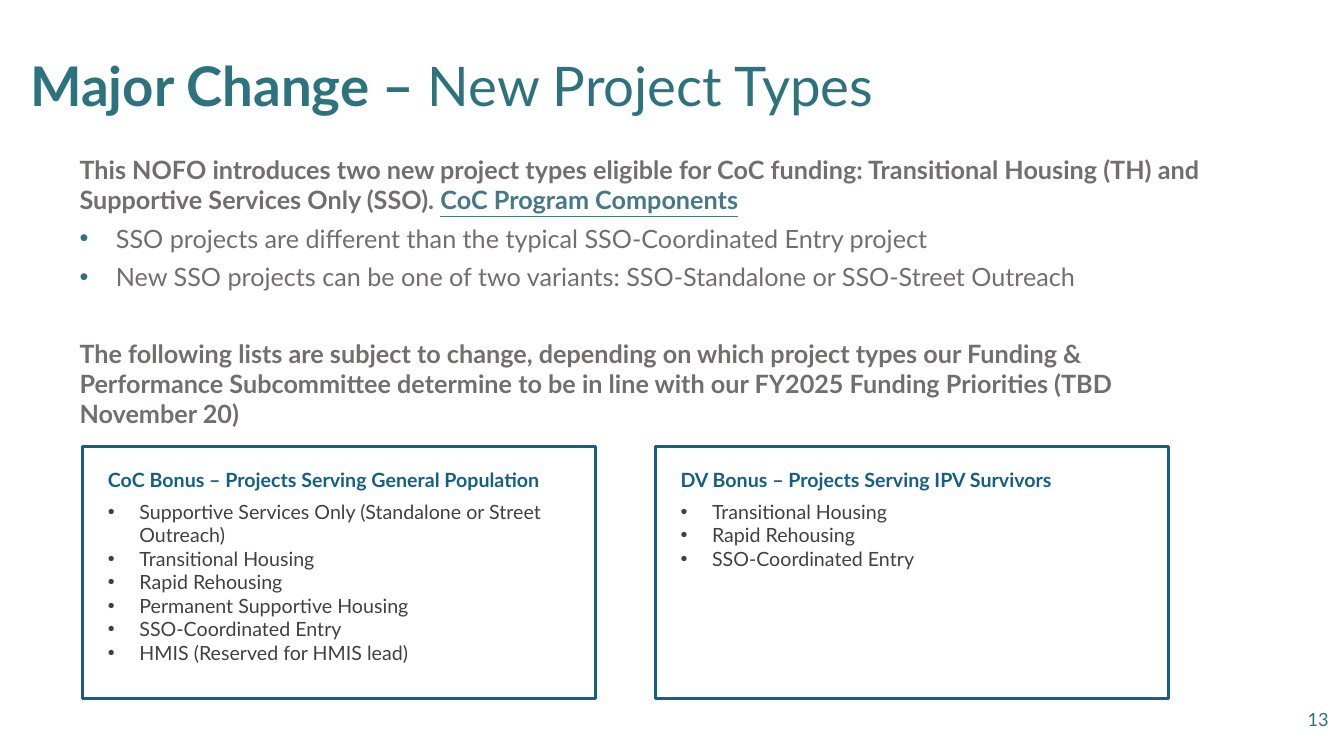
from lxml import etree
from pptx import Presentation
from pptx.dml.color import RGBColor
from pptx.enum.shapes import MSO_SHAPE
from pptx.enum.text import MSO_ANCHOR, MSO_AUTO_SIZE, PP_ALIGN
from pptx.oxml.ns import qn
from pptx.util import Pt

RECT = MSO_SHAPE.RECTANGLE
TOP, BOTTOM = MSO_ANCHOR.TOP, MSO_ANCHOR.BOTTOM
FIXED = MSO_AUTO_SIZE.NONE
LEFT, RIGHT = PP_ALIGN.LEFT, PP_ALIGN.RIGHT

TEAL, GRAY, LINK = "2D737E", "726E6E", "467886"
NAVY, DARK = "156082", "404040"

INTRO = [
    ("This NOFO introduces two new project types eligible for CoC funding: "
     "Transitional Housing (TH) and Supportive Services Only (SSO). "),
    "CoC Program Components",
]
POINTS = [
    "SSO projects are different than the typical SSO-Coordinated Entry project",
    "New SSO projects can be one of two variants: SSO-Standalone or SSO-Street Outreach",
]
NOTICE = (
    "The following lists are subject to change, depending on which project types "
    "our Funding & Performance Subcommittee determine to be in line with our "
    "FY2025 Funding Priorities (TBD November 20)"
)
CARDS = [
    ("CoC Bonus – Projects Serving General Population", [
        "Supportive Services Only (Standalone or Street Outreach)",
        "Transitional Housing",
        "Rapid Rehousing",
        "Permanent Supportive Housing",
        "SSO-Coordinated Entry",
        "HMIS (Reserved for HMIS lead)",
    ]),
    ("DV Bonus – Projects Serving IPV Survivors", [
        "Transitional Housing",
        "Rapid Rehousing",
        "SSO-Coordinated Entry",
    ]),
]


def color(code):
    return RGBColor.from_string(code)


class Page:
    face = "Lato"

    def __init__(self, deck):
        self.slide = deck.slides.add_slide(deck.slide_layouts[1])

    def frame(self, shape, box, pad, anchor=TOP):
        shape.left, shape.top, shape.width, shape.height = map(Pt, box)
        frame = shape.text_frame
        frame.word_wrap = True
        frame.auto_size = FIXED
        frame.vertical_anchor = anchor
        (frame.margin_left, frame.margin_top,
         frame.margin_right, frame.margin_bottom) = map(Pt, pad)
        return frame

    def holder(self, index, box, pad, anchor=TOP):
        return self.frame(self.slide.placeholders[index], box, pad, anchor)

    def text(self, box, pad):
        shape = self.slide.shapes.add_textbox(*map(Pt, box))
        return self.frame(shape, box, pad)

    def para(self, frame, parts, size, tint, bold=False, gap=0,
             left=0, hang=0, dot=None, align=LEFT):
        para = frame.paragraphs[0]
        if para.runs:
            para = frame.add_paragraph()
        for part in parts:
            para.add_run().text = part
        self.bullet(para, left, hang, dot)
        para.alignment = align
        para.line_spacing = 1.0
        para.space_before = Pt(gap)
        font = para.font
        font.name, font.size, font.bold = self.face, Pt(size), bold
        font.color.rgb = color(tint)
        return para

    def bullet(self, para, left, hang, dot):
        props = para._p.get_or_add_pPr()
        props.set("marL", str(Pt(left)))
        props.set("indent", str(-Pt(hang)))
        if not dot:
            etree.SubElement(props, qn("a:buNone"))
            return
        tint = etree.SubElement(props, qn("a:buClr"))
        etree.SubElement(tint, qn("a:srgbClr"), val=dot)
        etree.SubElement(props, qn("a:buFont"), typeface="Arial")
        etree.SubElement(props, qn("a:buChar"), char="•")

    def border(self, box):
        shape = self.slide.shapes.add_shape(RECT, *map(Pt, box))
        shape.shadow.inherit = False
        shape.fill.background()
        shape.line.color.rgb = color(NAVY)
        shape.line.width = Pt(2.25)

    def card(self, left, head, items):
        self.border((left, 319, 366.5, 180))
        frame = self.text((left + 11, 330.5, 358.5, 152), (7.2, 3.6, 7.2, 3.6))
        self.para(frame, [head], 14, NAVY, bold=True)
        for row, item in enumerate(items):
            self.para(frame, [item], 14, DARK, gap=0 if row else 6,
                      left=22.5, hang=22.5, dot=DARK)


def main():
    deck = Presentation()
    deck.slide_width, deck.slide_height = Pt(960), Pt(540)
    page = Page(deck)

    title = page.holder(0, (14.4, 1.4, 931, 90), (7.2, 3.6, 7.2, 7.2), BOTTOM)
    head = page.para(title, ["Major Change – ", "New Project Types"], 39, TEAL)
    head.runs[0].font.bold = True

    body = page.holder(1, (39.6, 106.6, 836.6, 204.5), (7.2, 3.6, 7.2, 3.6))
    intro = page.para(body, INTRO, 18, GRAY, bold=True, gap=5.8, left=10)
    link = intro.runs[1].font
    link.color.rgb = color(LINK)
    link.underline = True
    for point in POINTS:
        page.para(body, [point], 18, GRAY, gap=5.8, left=36, hang=26, dot=TEAL)
    page.para(body, [NOTICE], 18, GRAY, bold=True, gap=33.2, left=10)

    for col, (name, items) in enumerate(CARDS):
        page.card(59 + 409 * col, name, items)

    number = page.text((898.6, 499, 57.6, 41), (7.2, 7.2, 7.2, 7.2))
    page.para(number, ["13"], 13, TEAL, align=RIGHT)

    deck.save("out.pptx")


if __name__ == "__main__":
    main()
